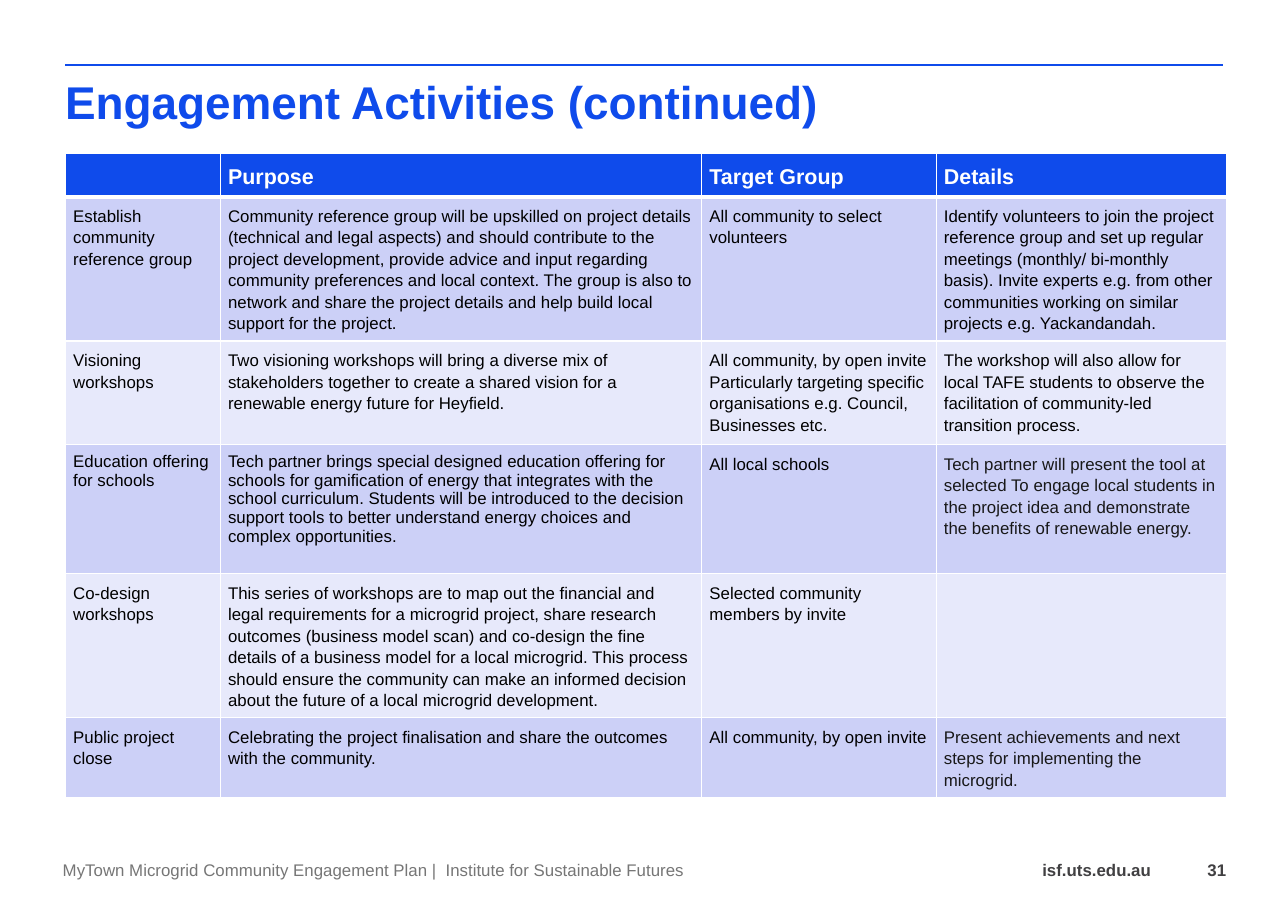
from pptx import Presentation
from pptx.dml.color import RGBColor
from pptx.enum.shapes import MSO_CONNECTOR
from pptx.enum.text import MSO_ANCHOR, MSO_AUTO_SIZE, PP_ALIGN
from pptx.oxml.xmlchemy import OxmlElement
from pptx.util import Pt

STRAIGHT = MSO_CONNECTOR.STRAIGHT
TOP, MIDDLE = MSO_ANCHOR.TOP, MSO_ANCHOR.MIDDLE
LEFT, RIGHT = PP_ALIGN.LEFT, PP_ALIGN.RIGHT
NO_FIT = MSO_AUTO_SIZE.NONE

BLUE = RGBColor(0x0F, 0x4B, 0xEB)
WHITE = RGBColor(0xFF, 0xFF, 0xFF)
BLACK = RGBColor(0, 0, 0)
NEAR_BLACK = RGBColor(0x18, 0x18, 0x18)
DARK_GREY = RGBColor(0x41, 0x40, 0x42)
GREY = RGBColor(0x76, 0x76, 0x76)
BANDS = (RGBColor(0xCC, 0xD0, 0xF7), RGBColor(0xE7, 0xE9, 0xFB))

TITLE_FONT = {"size": Pt(30), "bold": True}
HEADER_FONT = {"size": Pt(14), "bold": True}
BODY_FONT = {"size": Pt(11), "bold": False}
STRONG_FONT = {"size": Pt(11), "bold": True}

NO_MARGINS = dict.fromkeys(("margin_left", "margin_right", "margin_top", "margin_bottom"), 0)
CELL_MARGINS = dict.fromkeys(NO_MARGINS, Pt(5.04))

COLUMN_WIDTHS = (101.2, 314.6, 153.2, 189.6)
ROW_HEIGHTS = (27.4, 94, 67.5, 84.3, 94, 52.3)
HEADINGS = ("", "Purpose", "Target Group", "Details")
ACTIVITIES = (
    ("Establish community reference group",
     "Community reference group will be upskilled on project details (technical and legal aspects) "
     "and should contribute to the project development, provide advice and input regarding "
     "community preferences and local context. The group is also to network and share the project "
     "details and help build local support for the project.",
     "All community to select volunteers",
     "Identify volunteers to join the project reference group and set up regular meetings "
     "(monthly/ bi-monthly basis). Invite experts e.g. from other communities working on similar "
     "projects e.g. Yackandandah."),
    ("Visioning workshops",
     "Two visioning workshops will bring a diverse mix of stakeholders together to create a shared "
     "vision for a renewable energy future for Heyfield.",
     "All community, by open invite\n"
     "Particularly targeting specific organisations e.g. Council, Businesses etc.",
     "The workshop will also allow for local TAFE students to observe the facilitation of "
     "community-led transition process."),
    ("Education offering for schools",
     "Tech partner brings special designed education offering for schools for gamification of "
     "energy that integrates with the school curriculum. Students will be introduced to the "
     "decision support tools to better understand energy choices and complex opportunities.",
     "All local schools",
     "Tech partner will present the tool at selected To engage local students in the project idea "
     "and demonstrate the benefits of renewable energy."),
    ("Co-design workshops",
     "This series of workshops are to map out the financial and legal requirements for a microgrid "
     "project, share research outcomes (business model scan) and co-design the fine details of a "
     "business model for a local microgrid. This process should ensure the community can make an "
     "informed decision about the future of a local microgrid development.",
     "Selected community members by invite",
     ""),
    ("Public project close",
     "Celebrating the project finalisation and share the outcomes with the community.",
     "All community, by open invite",
     "Present achievements and next steps for implementing the microgrid."),
)
SINGLE_SPACED = {(3, 0), (3, 1)}
SOFT_TEXT = {(3, 3), (5, 3)}


def apply_format(target, values):
    for name, value in values.items():
        setattr(target, name, value)


def write_text(frame, text, font, color, align=LEFT, spacing=1.0):
    frame.text = text
    for para in frame.paragraphs:
        apply_format(para, {"alignment": align, "line_spacing": spacing})
        for span in para.runs:
            apply_format(span.font, {"name": "Arial", **font})
            span.font.color.rgb = color


def add_label(page, left, top, width, height, text, font, color, align=LEFT):
    box = page.shapes.add_textbox(Pt(left), Pt(top), Pt(width), Pt(height))
    apply_format(box.text_frame, {"word_wrap": True, "vertical_anchor": MIDDLE, **NO_MARGINS})
    write_text(box.text_frame, text, font, color, align)


def add_rule(page, left, top, right):
    rule = page.shapes.add_connector(STRAIGHT, Pt(left), Pt(top), Pt(right), Pt(top))
    rule.line.width = Pt(1.5)
    rule.line.color.rgb = BLUE
    rule._element.spPr.append(OxmlElement("a:effectLst"))


def set_title(page, text):
    title = page.shapes.title
    apply_format(title, {"left": Pt(42.5), "top": Pt(52.5), "width": Pt(757), "height": Pt(39.6)})
    apply_format(title.text_frame, {"word_wrap": True, "auto_size": NO_FIT,
                                    "vertical_anchor": TOP, **NO_MARGINS})
    write_text(title.text_frame, text, TITLE_FONT, BLUE, spacing=0.9)


def set_borders(cell, top_width, bottom_width):
    widths = {"a:lnL": 1, "a:lnR": 1, "a:lnT": top_width, "a:lnB": bottom_width}
    for tag, width in widths.items():
        border = OxmlElement(tag)
        border.set("w", str(Pt(width)))
        fill = OxmlElement("a:solidFill")
        color = OxmlElement("a:srgbClr")
        color.set("val", str(WHITE))
        fill.append(color)
        border.append(fill)
        cell._tc.get_or_add_tcPr().append(border)


def set_empty_size(cell, size):
    end = OxmlElement("a:endParaRPr")
    end.set("sz", str(size * 100))
    cell.text_frame.paragraphs[0]._p.append(end)


def fill_cell(cell, row, column, text):
    header = row == 0
    set_borders(cell, 3 if row == 1 else 1, 3 if header else 1)
    cell.fill.solid()
    cell.fill.fore_color.rgb = BLUE if header else BANDS[(row - 1) % 2]
    apply_format(cell, {"vertical_anchor": TOP, **CELL_MARGINS})
    if not text:
        set_empty_size(cell, 11)
        return
    color = WHITE if header else NEAR_BLACK if (row, column) in SOFT_TEXT else BLACK
    spacing = 1.0 if (row, column) in SINGLE_SPACED else 1.15
    write_text(cell.text_frame, text, HEADER_FONT if header else BODY_FONT, color, spacing=spacing)


def add_activity_table(page, left, top):
    frame = page.shapes.add_table(len(ROW_HEIGHTS), len(COLUMN_WIDTHS), Pt(left), Pt(top),
                                  Pt(sum(COLUMN_WIDTHS)), Pt(sum(ROW_HEIGHTS)))
    table = frame.table
    for column, width in zip(table.columns, COLUMN_WIDTHS):
        column.width = Pt(width)
    for row, height in zip(table.rows, ROW_HEIGHTS):
        row.height = Pt(height)
    for row, texts in enumerate((HEADINGS, *ACTIVITIES)):
        for column, text in enumerate(texts):
            fill_cell(table.cell(row, column), row, column, text)


def main():
    deck = Presentation()
    apply_format(deck, {"slide_width": Pt(841.68), "slide_height": Pt(595.44)})
    page = deck.slides.add_slide(deck.slide_layouts[5])
    add_rule(page, 42.5, 42.5, 799.2)
    set_title(page, "Engagement Activities (continued)")
    add_activity_table(page, 42.8, 100.4)
    add_label(page, 41, 557.3, 425.5, 22.3,
              "MyTown Microgrid Community Engagement Plan |  Institute for Sustainable Futures",
              BODY_FONT, GREY)
    add_label(page, 611.3, 557.3, 141, 22.3, "isf.uts.edu.au", STRONG_FONT, DARK_GREY, RIGHT)
    add_label(page, 767.5, 557.3, 33.8, 22.3, "31", STRONG_FONT, DARK_GREY, RIGHT)
    deck.save("out.pptx")


if __name__ == "__main__":
    main()
